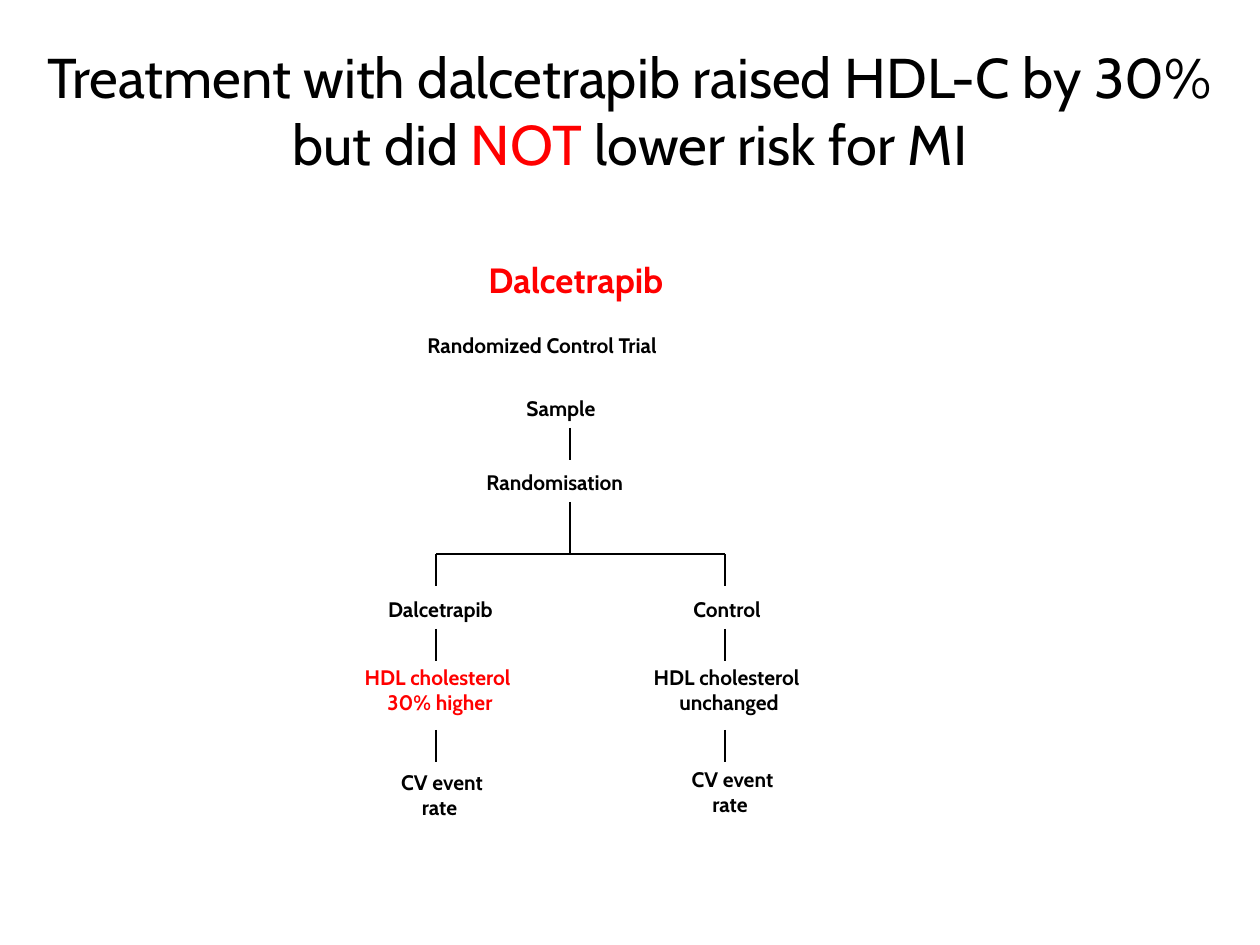
from lxml import etree
from pptx import Presentation
from pptx.dml.color import RGBColor
from pptx.enum.shapes import MSO_CONNECTOR
from pptx.enum.text import MSO_ANCHOR, MSO_AUTO_SIZE, PP_ALIGN
from pptx.oxml.ns import qn
from pptx.util import Emu, Pt

LEFT, CENTER = PP_ALIGN.LEFT, PP_ALIGN.CENTER
MIDDLE = MSO_ANCHOR.MIDDLE
GROW = MSO_AUTO_SIZE.SHAPE_TO_FIT_TEXT
STRAIGHT = MSO_CONNECTOR.STRAIGHT
BLACK, RED = "000000", "FF0000"


def px(n):
    return Emu(round(n * 914400 / 126))


def color(value):
    return RGBColor.from_string(value)


class TrialSlide:
    """Draws the text and lines of a trial diagram in one style."""

    font = "Cabin"
    line_width = Pt(0.75)

    def __init__(self, prs):
        self.s = prs.slides.add_slide(prs.slide_layouts[6])

    def style(self, r, size, fill, bold):
        r.font.name = self.font
        r.font.size = Pt(size)
        r.font.bold = bold
        r.font.color.rgb = color(fill)

    def title(self, x, y, w, h, parts):
        tf = self.s.shapes.add_textbox(px(x), px(y), px(w), px(h)).text_frame
        tf.word_wrap = True
        tf.vertical_anchor = MIDDLE
        p = tf.paragraphs[0]
        p.alignment = CENTER
        for text, fill in parts:
            r = p.add_run()
            r.text = text
            self.style(r, 32, fill, False)

    def label(self, x, y, w, h, text, fill=BLACK, size=12, align=CENTER, wrap=False):
        tf = self.s.shapes.add_textbox(px(x), px(y), px(w), px(h)).text_frame
        tf.word_wrap = wrap
        tf.auto_size = GROW
        tf.text = text
        for p in tf.paragraphs:
            p.alignment = align
            self.style(p.runs[0], size, fill, True)

    def line(self, x1, y1, x2, y2):
        c = self.s.shapes.add_connector(STRAIGHT, px(x1), px(y1), px(x2), px(y2))
        c.line.color.rgb = color(BLACK)
        c.line.width = self.line_width
        etree.SubElement(c._element.spPr, qn("a:effectLst"))


def main():
    prs = Presentation()
    prs.slide_width, prs.slide_height = px(1260), px(945)
    slide = TrialSlide(prs)

    slide.label(387, 252, 378, 55, "Dalcetrapib", RED, size=20, wrap=True)
    for x, y, w, text in (
        (415, 326, 305, "Randomized Control Trial"),
        (514, 389, 105, "Sample"),
        (474, 463, 188, "Randomisation"),
    ):
        slide.label(x, y, w, 38, text, align=LEFT)

    trunk, left, right, fork = 570, 436, 725, 554
    slide.line(trunk, 428, trunk, 460)
    slide.line(trunk, 502, trunk, fork)
    slide.line(left, fork, right, fork)
    for x in (left, right):
        for top in (fork, 629, 730):
            slide.line(x, top, x, top + 32)

    for x, y, w, h, text, fill in (
        (365, 590, 151, 38, "Dalcetrapib", BLACK),
        (673, 590, 108, 38, "Control", BLACK),
        (340, 658, 200, 63, "HDL cholesterol \n30% higher", RED),
        (629, 658, 200, 63, "HDL cholesterol \nunchanged", BLACK),
        (379, 763, 126, 63, "CV event\nrate ", BLACK),
        (670, 760, 125, 63, "CV event\nrate ", BLACK),
    ):
        slide.label(x, y, w, h, text, fill)

    slide.title(0, 61, 1260, 98, (
        ("Treatment with dalcetrapib raised HDL-C by 30% but did ", BLACK),
        ("NOT ", RED),
        ("lower risk for MI", BLACK),
    ))
    prs.save("out.pptx")


if __name__ == "__main__":
    main()
